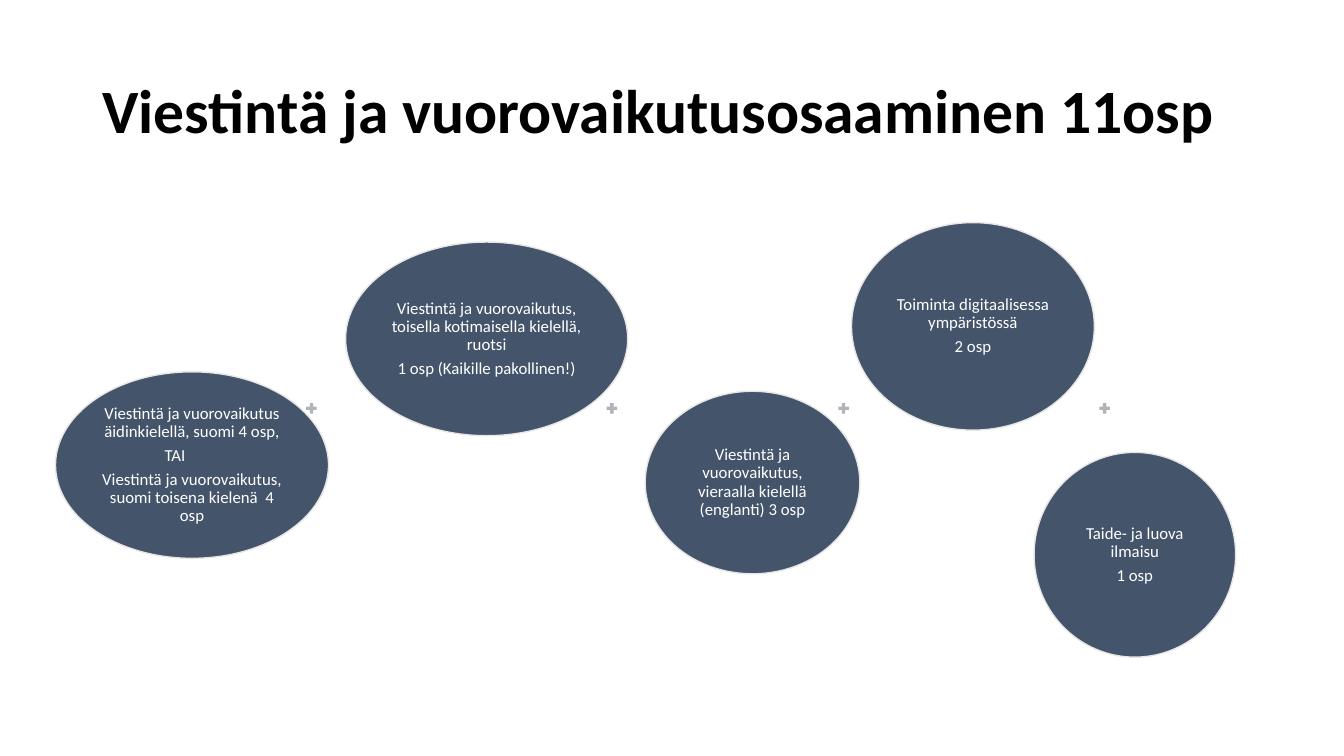
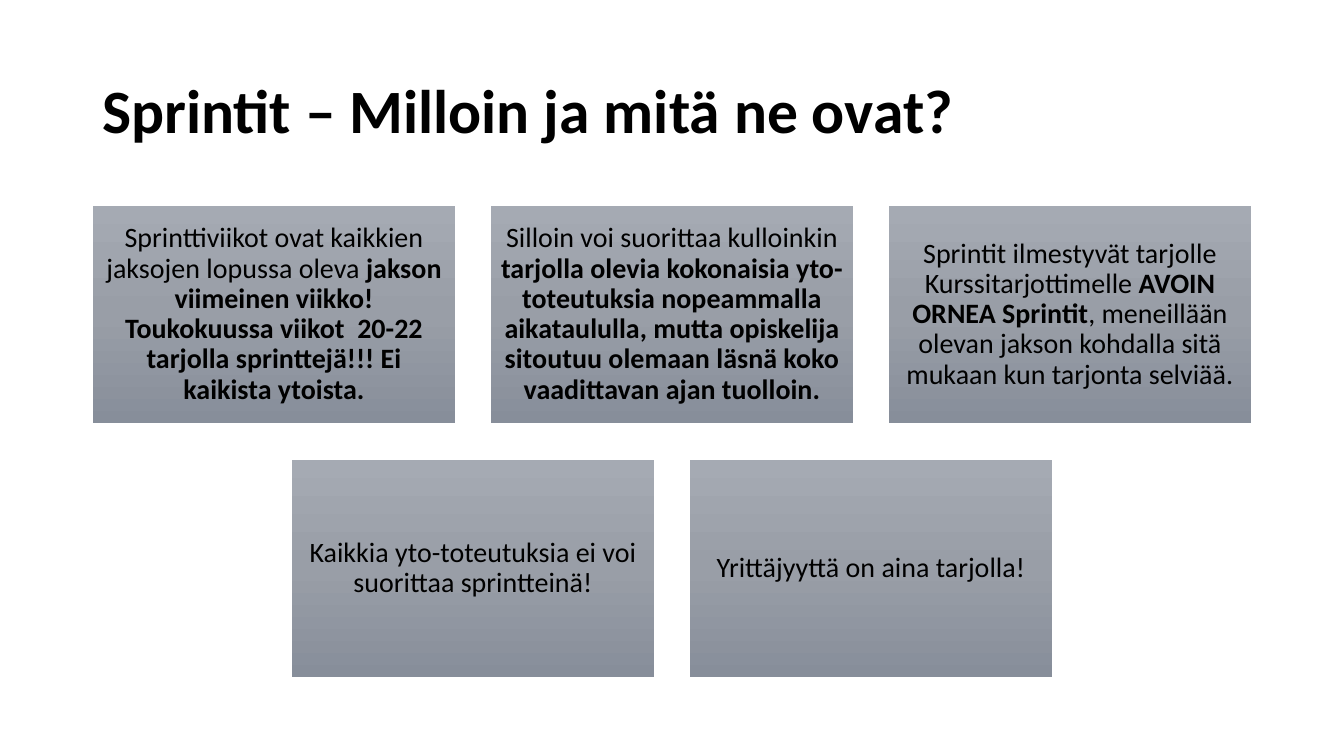
from copy import deepcopy
from dataclasses import dataclass

from pptx import Presentation
from pptx.dml.color import RGBColor
from pptx.enum.shapes import MSO_SHAPE
from pptx.enum.text import MSO_ANCHOR, PP_ALIGN
from pptx.util import Cm, Pt

ELLIPSE, PLUS, RECTANGLE = MSO_SHAPE.OVAL, MSO_SHAPE.MATH_PLUS, MSO_SHAPE.RECTANGLE
MIDDLE = MSO_ANCHOR.MIDDLE
LEFT, CENTER = PP_ALIGN.LEFT, PP_ALIGN.CENTER

FONT = "Calibri"
BLACK, WHITE = "000000", "FFFFFF"
NAVY, PALE, PLUS_GRAY = "44546A", "E7E6E6", "B0B4B9"
CARD_GRADIENT = ("A5AAB3", "999EA7", "878E9A")

SLIDE_W, SLIDE_H = 33.87, 19.05
TITLE_W = 29.21
CARD_W, CARD_H, CARD_GAP, CARDS_TOP = 9.12, 5.49, 0.91, 5.18
PLUS_TOP, PLUS_SIZE = 10.11, 0.36


@dataclass
class Run:
    text: str
    bold: bool = False


@dataclass
class Paragraph:
    runs: list[Run]
    right_indent: float = 0


@dataclass
class Bubble:
    left: float
    top: float
    width: float
    height: float
    paragraphs: list[Paragraph]


def plain(text: str, right_indent: float = 0) -> Paragraph:
    return Paragraph([Run(text)], right_indent)


BUBBLES = [
    Bubble(1.4, 9.37, 6.88, 4.7, [
        plain("Viestintä ja vuorovaikutus äidinkielellä, suomi 4 osp,"),
        plain("TAI", right_indent=0.86),
        plain("Viestintä ja vuorovaikutus, suomi toisena kielenä  4 osp"),
    ]),
    Bubble(8.71, 6.1, 7.11, 4.88, [
        plain("Viestintä ja vuorovaikutus, toisella kotimaisella kielellä, ruotsi"),
        plain("1 osp (Kaikille pakollinen!)"),
    ]),
    Bubble(16.26, 9.86, 5.41, 4.6, [
        plain("Viestintä ja vuorovaikutus, vieraalla kielellä (englanti) 3 osp"),
    ]),
    Bubble(21.46, 5.61, 6.12, 5.23, [
        plain("Toiminta digitaalisessa ympäristössä"),
        plain("2 osp"),
    ]),
    Bubble(26.06, 11.4, 5.08, 5.16, [
        plain("Taide- ja luova ilmaisu"),
        plain("1 osp"),
    ]),
]
PLUS_LEFTS = [7.67, 15.24, 21.08, 27.66]

CARD_ROWS = [
    [
        Paragraph([
            Run("Sprinttiviikot ovat kaikkien jaksojen lopussa oleva "),
            Run("jakson viimeinen viikko! Toukokuussa viikot  20-22 "
                "tarjolla sprinttejä!!! Ei kaikista ytoista.", True),
        ]),
        Paragraph([
            Run("Silloin voi suorittaa kulloinkin "),
            Run("tarjolla olevia kokonaisia yto-toteutuksia nopeammalla "
                "aikataululla, mutta opiskelija sitoutuu olemaan läsnä koko "
                "vaadittavan ajan tuolloin.", True),
        ]),
        Paragraph([
            Run("Sprintit ilmestyvät tarjolle Kurssitarjottimelle "),
            Run("AVOIN ORNEA Sprintit", True),
            Run(", meneillään olevan jakson kohdalla sitä mukaan kun "
                "tarjonta selviää."),
        ]),
    ],
    [
        plain("Kaikkia yto-toteutuksia ei voi suorittaa sprintteinä!"),
        plain("Yrittäjyyttä on aina tarjolla!"),
    ],
]


def rgb(value: str) -> RGBColor:
    return RGBColor.from_string(value)


def write(sp, paragraphs: list[Paragraph], size: float, color: str,
          inset: float, align=CENTER) -> None:
    tf = sp.text_frame
    tf.word_wrap = True
    tf.vertical_anchor = MIDDLE
    tf.margin_left = tf.margin_right = tf.margin_top = tf.margin_bottom = Cm(inset)
    for i, paragraph in enumerate(paragraphs):
        p = tf.add_paragraph() if i else tf.paragraphs[0]
        p.alignment = align
        p.line_spacing = 0.9
        p.space_after = Pt(size * 0.35)
        p._p.get_or_add_pPr().set("marR", str(Cm(paragraph.right_indent)))
        for run in paragraph.runs:
            r = p.add_run()
            r.text = run.text
            r.font.name = FONT
            r.font.size = Pt(size)
            r.font.bold = run.bold
            r.font.color.rgb = rgb(color)


def add_shape(s, kind, left: float, top: float, width: float, height: float,
              fill: str = "", line: str = ""):
    sp = s.shapes.add_shape(kind, Cm(left), Cm(top), Cm(width), Cm(height))
    sp.shadow.inherit = False
    if fill:
        sp.fill.solid()
        sp.fill.fore_color.rgb = rgb(fill)
    if line:
        sp.line.color.rgb = rgb(line)
        sp.line.width = Pt(1)
    else:
        sp.line.fill.background()
    return sp


def fill_downward(sp, colors: tuple[str, ...]) -> None:
    """Fill with evenly spaced gradient stops from top to bottom."""
    sp.fill.gradient()
    sp.fill.gradient_angle = 270
    stop_list = sp._element.spPr.find(".//{*}gsLst")
    while len(stop_list) < len(colors):
        stop_list.append(deepcopy(stop_list[0]))
    for i, (stop, color) in enumerate(zip(sp.fill.gradient_stops, colors)):
        stop.position = i / (len(colors) - 1)
        stop.color.rgb = rgb(color)


def add_slide(prs, title: str):
    s = prs.slides.add_slide(prs.slide_layouts[6])
    box = s.shapes.add_textbox(Cm((SLIDE_W - TITLE_W) / 2), Cm(1.02),
                               Cm(TITLE_W), Cm(3.68))
    write(box, [Paragraph([Run(title, True)])], 44, BLACK, 0.25, LEFT)
    return s


def build_communication(prs) -> None:
    s = add_slide(prs, "Viestintä ja vuorovaikutusosaaminen 11osp")
    for b in BUBBLES:
        sp = add_shape(s, ELLIPSE, b.left, b.top, b.width, b.height, NAVY, PALE)
        write(sp, b.paragraphs, 12, WHITE, 0.05)
    for left in PLUS_LEFTS:
        add_shape(s, PLUS, left, PLUS_TOP, PLUS_SIZE, PLUS_SIZE, PLUS_GRAY)


def build_sprints(prs) -> None:
    s = add_slide(prs, "Sprintit – Milloin ja mitä ne ovat?")
    for row, cards in enumerate(CARD_ROWS):
        row_w = len(cards) * (CARD_W + CARD_GAP) - CARD_GAP
        row_left = (SLIDE_W - row_w) / 2
        top = CARDS_TOP + row * (CARD_H + CARD_GAP)
        for col, card in enumerate(cards):
            left = row_left + col * (CARD_W + CARD_GAP)
            sp = add_shape(s, RECTANGLE, left, top, CARD_W, CARD_H)
            fill_downward(sp, CARD_GRADIENT)
            write(sp, [card], 20, BLACK, 0.2)


def main() -> None:
    prs = Presentation()
    prs.slide_width, prs.slide_height = Cm(SLIDE_W), Cm(SLIDE_H)
    build_communication(prs)
    build_sprints(prs)
    prs.save("out.pptx")


if __name__ == "__main__":
    main()
